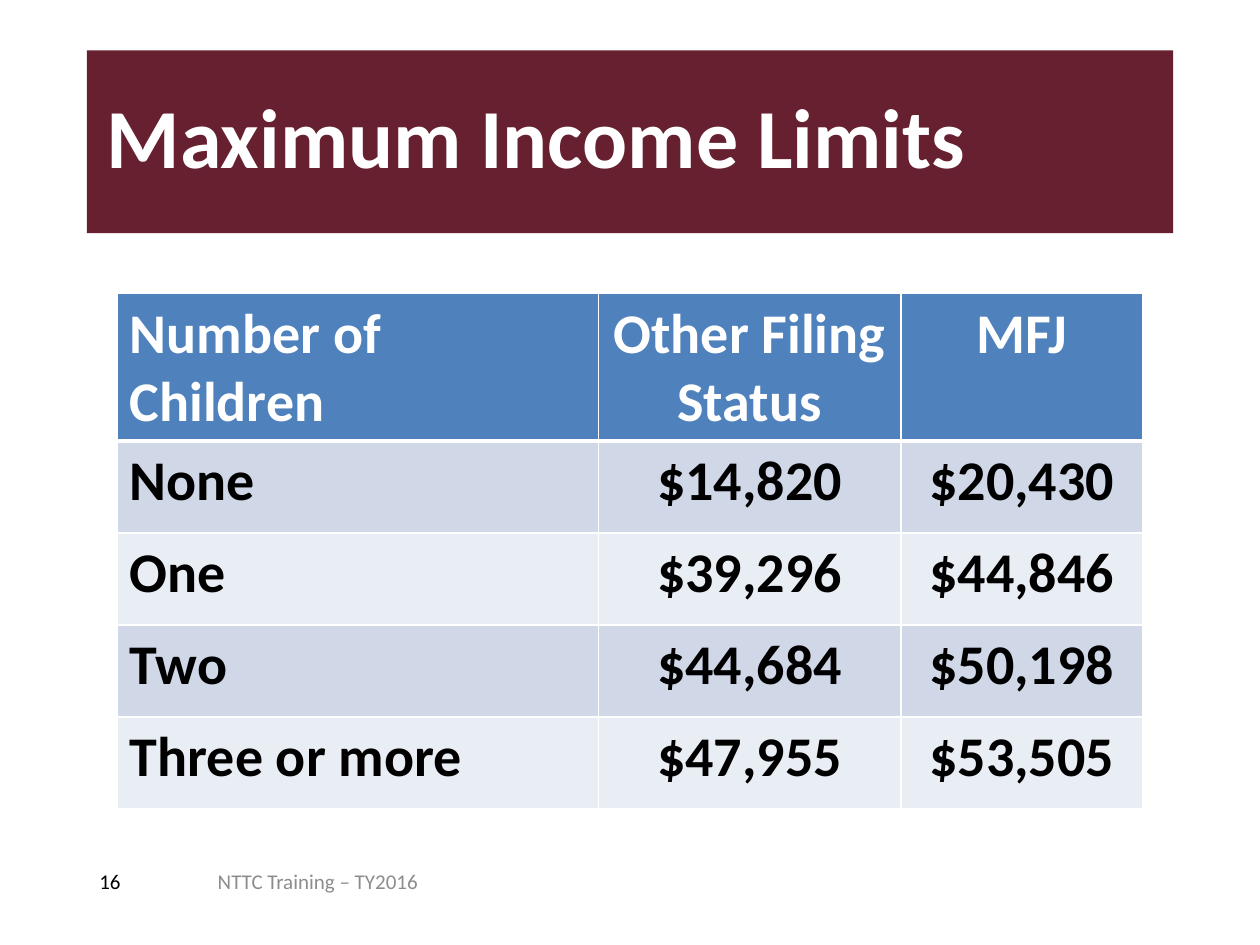
import pptx
import pptx.util
import pptx.dml.color
import pptx.enum.shapes
import pptx.enum.text
import pptx.oxml.ns
import lxml.etree

Inches = pptx.util.Inches
Pt = pptx.util.Pt
RGBColor = pptx.dml.color.RGBColor
PP_ALIGN = pptx.enum.text.PP_ALIGN
MIDDLE = pptx.enum.text.MSO_ANCHOR.MIDDLE
qn = pptx.oxml.ns.qn

FONT = "Calibri"
WHITE = RGBColor(0xFF, 0xFF, 0xFF)
BLACK = RGBColor(0, 0, 0)
GRAY = RGBColor(0x8C, 0x8C, 0x8C)
MAROON = RGBColor(0x67, 0x20, 0x2F)
HEADER_BLUE = RGBColor(0x4F, 0x81, 0xBD)
BANDS = (RGBColor(0xD0, 0xD8, 0xE8), RGBColor(0xE9, 0xED, 0xF4))

INCOME_LIMITS = (
    ("Number of Children", "Other Filing Status", "MFJ"),
    ("None", "$14,820", "$20,430"),
    ("One", "$39,296", "$44,846"),
    ("Two", "$44,684", "$50,198"),
    ("Three or more", "$47,955", "$53,505"),
)
COLUMN_WIDTHS = (3.82, 2.4, 1.92)
HEADER_HEIGHT = 1.17
ROW_HEIGHT = 0.73


def write(paragraph, text, size, color, bold=False, alignment=PP_ALIGN.LEFT):
    paragraph.alignment = alignment
    run = paragraph.add_run()
    run.text = text
    run.font.name = FONT
    run.font.size = Pt(size)
    run.font.bold = bold
    run.font.color.rgb = color


def add_title(slide, text):
    shape = slide.shapes.add_shape(
        pptx.enum.shapes.MSO_SHAPE.RECTANGLE,
        Inches(0.69), Inches(0.4), Inches(8.62), Inches(1.45))
    shape.shadow.inherit = False
    shape.fill.solid()
    shape.fill.fore_color.rgb = MAROON
    shape.line.fill.background()
    frame = shape.text_frame
    frame.word_wrap = True
    frame.vertical_anchor = MIDDLE
    paragraph = frame.paragraphs[0]
    paragraph.line_spacing = 0.9
    paragraph._p.get_or_add_pPr().set("marL", str(Inches(0.06)))
    write(paragraph, text, 48, WHITE, bold=True)


def add_footer(slide, text, left, width, color):
    box = slide.shapes.add_textbox(
        Inches(left), Inches(6.79), Inches(width), Inches(0.4))
    frame = box.text_frame
    frame.word_wrap = True
    frame.vertical_anchor = MIDDLE
    write(frame.paragraphs[0], text, 12, color)


def set_borders(cell, widths):
    properties = cell._tc.get_or_add_tcPr()
    for side, width in widths.items():
        line = lxml.etree.SubElement(
            properties, qn(f"a:ln{side}"), w=str(Pt(width)))
        fill = lxml.etree.SubElement(line, qn("a:solidFill"))
        lxml.etree.SubElement(fill, qn("a:srgbClr"), val=str(WHITE))


def add_income_table(slide):
    height = HEADER_HEIGHT + ROW_HEIGHT * (len(INCOME_LIMITS) - 1)
    table = slide.shapes.add_table(
        len(INCOME_LIMITS), len(COLUMN_WIDTHS), Inches(0.93), Inches(2.33),
        Inches(sum(COLUMN_WIDTHS)), Inches(height)).table
    for column, width in zip(table.columns, COLUMN_WIDTHS):
        column.width = Inches(width)
    for row_index, values in enumerate(INCOME_LIMITS):
        is_header = row_index == 0
        table.rows[row_index].height = Inches(
            HEADER_HEIGHT if is_header else ROW_HEIGHT)
        borders = {
            "L": 1, "R": 1,
            "T": 3 if row_index == 1 else 1,
            "B": 3 if is_header else 1,
        }
        for column_index, value in enumerate(values):
            cell = table.cell(row_index, column_index)
            set_borders(cell, borders)
            cell.fill.solid()
            cell.fill.fore_color.rgb = (
                HEADER_BLUE if is_header else BANDS[(row_index - 1) % 2])
            write(cell.text_frame.paragraphs[0], value, 32,
                  WHITE if is_header else BLACK, bold=True,
                  alignment=PP_ALIGN.CENTER if column_index else PP_ALIGN.LEFT)


def main():
    presentation = pptx.Presentation()
    presentation.slide_width = Inches(10)
    presentation.slide_height = Inches(7.5)
    slide = presentation.slides.add_slide(presentation.slide_layouts[6])
    add_title(slide, "Maximum Income Limits")
    add_footer(slide, "NTTC Training – TY2016", 1.63, 3.77, GRAY)
    add_footer(slide, "16", 0.69, 0.7, BLACK)
    add_income_table(slide)
    presentation.save("out.pptx")


if __name__ == "__main__":
    main()
